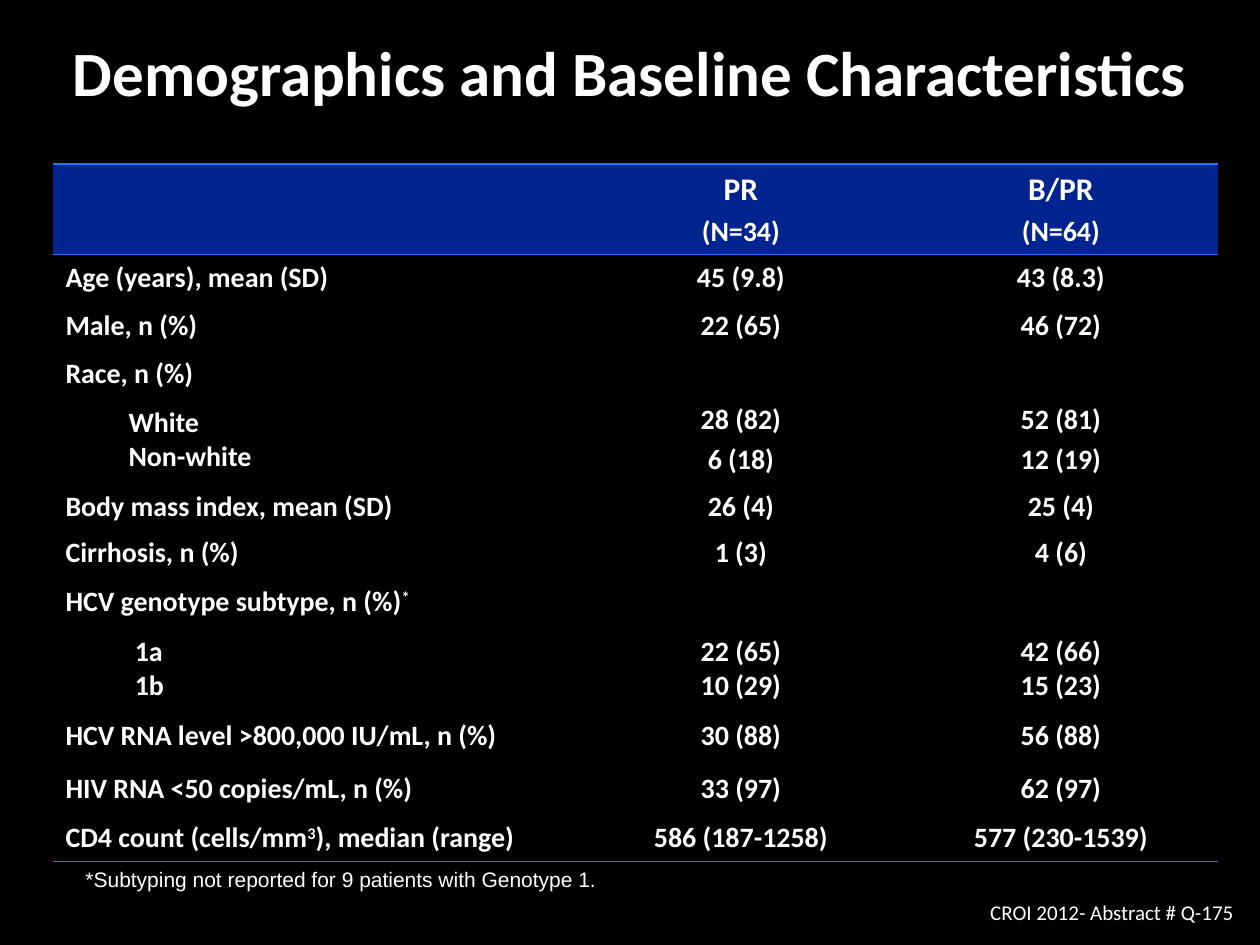
from dataclasses import dataclass

from lxml.etree import SubElement
from pptx import Presentation
from pptx.dml.color import RGBColor
from pptx.enum.text import MSO_ANCHOR, PP_ALIGN
from pptx.oxml.ns import qn
from pptx.util import Inches, Pt


@dataclass(frozen=True)
class Theme:
    back: RGBColor = RGBColor(0x00, 0x00, 0x00)
    text: RGBColor = RGBColor(0xFF, 0xFF, 0xFF)
    head: RGBColor = RGBColor(0x00, 0x24, 0x8F)
    rule: str = "2970FF"
    font: str = "Calibri"
    note_font: str = "Arial"
    title: int = 36
    group: int = 18
    body: int = 16
    note: int = 12


THEME = Theme()
COLS = [4.17, 2.58, 2.5]
GAP = 3.5  # points between the values of a spaced cell

# height, label (^ marks raised text), label indent, gap, PR values, B/PR values
ROWS = [
    (0.72, "", 0, GAP, "PR\n(N=34)", "B/PR\n(N=64)"),
    (0.37, "Age (years), mean (SD)", 0, 0, "45 (9.8)", "43 (8.3)"),
    (0.39, "Male, n (%)", 0, 0, "22 (65)", "46 (72)"),
    (0.36, "Race, n (%)", 0, 0, "", ""),
    (0.69, "White\nNon-white", 0.5, GAP, "28 (82)\n6 (18)", "52 (81)\n12 (19)"),
    (0.37, "Body mass index, mean (SD)", 0, 0, "26 (4)", "25 (4)"),
    (0.37, "Cirrhosis, n (%)", 0, 0, "1 (3)", "4 (6)"),
    (0.41, "HCV genotype subtype, n (%)^*", 0, 0, "", ""),
    (0.63, "1a\n1b", 0.55, 0, "22 (65)\n10 (29)", "42 (66)\n15 (23)"),
    (0.44, "HCV RNA level >800,000 IU/mL, n (%)", 0, 0, "30 (88)", "56 (88)"),
    (0.41, "HIV RNA <50 copies/mL, n (%)", 0, 0, "33 (97)", "62 (97)"),
    (0.37, "CD4 count (cells/mm^3^), median (range)", 0, 0,
     "586 (187-1258)", "577 (230-1539)"),
]


def style(para, size, font=THEME.font, bold=True, align=PP_ALIGN.LEFT):
    para.alignment = align
    para.font.size = Pt(size)
    para.font.name = font
    para.font.bold = bold
    para.font.color.rgb = THEME.text


def add_runs(para, text):
    """Write text, raising every second part between ^ marks."""
    for i, part in enumerate(text.split("^")):
        if part:
            run = para.add_run()
            run.text = part
            if i % 2:
                run.font._element.set("baseline", "30000")


def add_text(slide, box, text, size, anchor=MSO_ANCHOR.TOP, wrap=True, **look):
    frame = slide.shapes.add_textbox(*map(Inches, box)).text_frame
    frame.word_wrap = wrap
    frame.vertical_anchor = anchor
    para = frame.paragraphs[0]
    para.text = text
    style(para, size, **look)


def set_rules(cell, top, bottom):
    """Draw the chosen level borders and clear all the others."""
    props = cell._tc.get_or_add_tcPr()
    sides = {"lnL": False, "lnR": False, "lnT": top, "lnB": bottom}
    for side, drawn in sides.items():
        line = SubElement(props, qn(f"a:{side}"), w=str(Pt(1)))
        if drawn:
            fill = SubElement(line, qn("a:solidFill"))
            SubElement(fill, qn("a:srgbClr"), val=THEME.rule)
        else:
            SubElement(line, qn("a:noFill"))


def fill_cell(cell, text, head, align, indent=0, gap=0):
    cell.margin_left = Inches(0.1 + indent)
    cell.vertical_anchor = MSO_ANCHOR.TOP if head else MSO_ANCHOR.MIDDLE
    frame = cell.text_frame
    for i, line in enumerate(text.split("\n")):
        para = frame.add_paragraph() if i else frame.paragraphs[0]
        add_runs(para, line)
        size = THEME.group if head and i == 0 else THEME.body
        style(para, size, align=align)
        if i:
            para.space_before = Pt(gap)


def add_grid(slide):
    frame = slide.shapes.add_table(
        len(ROWS), len(COLS), Inches(0.42), Inches(1.3),
        Inches(sum(COLS)), Inches(sum(row[0] for row in ROWS)))
    table = frame.table
    table.horz_banding = False
    for col, width in zip(table.columns, COLS):
        col.width = Inches(width)
    for r, (height, label, indent, gap, *values) in enumerate(ROWS):
        table.rows[r].height = Inches(height)
        head = r == 0
        for c, text in enumerate([label, *values]):
            cell = table.cell(r, c)
            if c:
                fill_cell(cell, text, head, PP_ALIGN.CENTER, gap=gap)
            else:
                fill_cell(cell, text, head, PP_ALIGN.LEFT, indent)
            set_rules(cell, r < 2, head or r == len(ROWS) - 1)
            if head:
                cell.fill.solid()
                cell.fill.fore_color.rgb = THEME.head
            else:
                cell.fill.background()


def main():
    deck = Presentation()
    deck.slide_width, deck.slide_height = Inches(10), Inches(7.5)
    slide = deck.slides.add_slide(deck.slide_layouts[6])
    slide.background.fill.solid()
    slide.background.fill.fore_color.rgb = THEME.back

    add_text(slide, (0, -0.06, 10, 1.25),
             "Demographics and Baseline Characteristics", THEME.title,
             anchor=MSO_ANCHOR.MIDDLE, align=PP_ALIGN.CENTER)
    add_grid(slide)
    add_text(slide, (0.58, 6.83, 8.75, 0.3),
             "*Subtyping not reported for 9 patients with Genotype 1.",
             THEME.note, font=THEME.note_font, bold=False)
    add_text(slide, (7.71, 7.09, 2.18, 0.3), "CROI 2012- Abstract # Q-175",
             THEME.note, wrap=False, bold=False, align=PP_ALIGN.RIGHT)
    deck.save("out.pptx")


if __name__ == "__main__":
    main()
